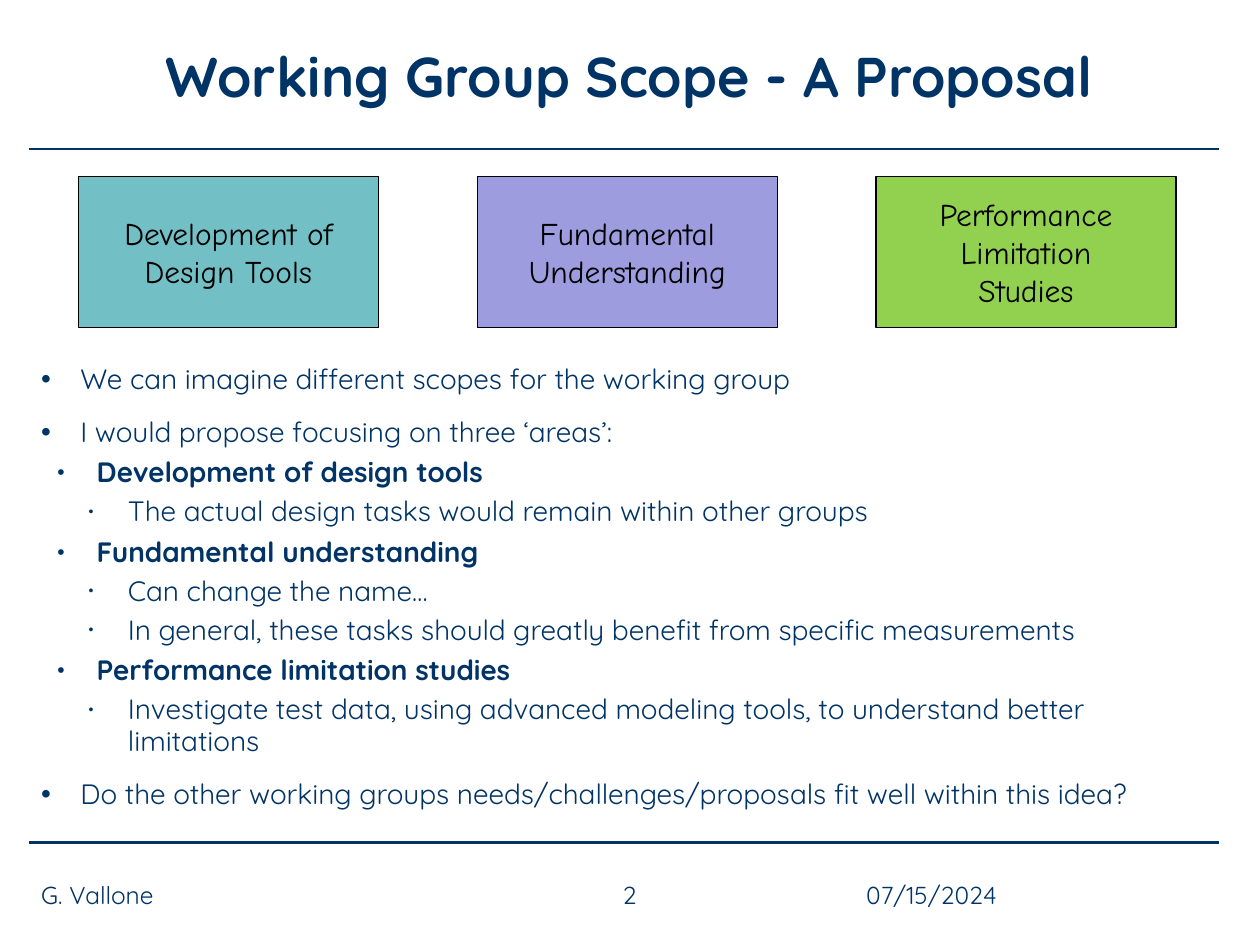
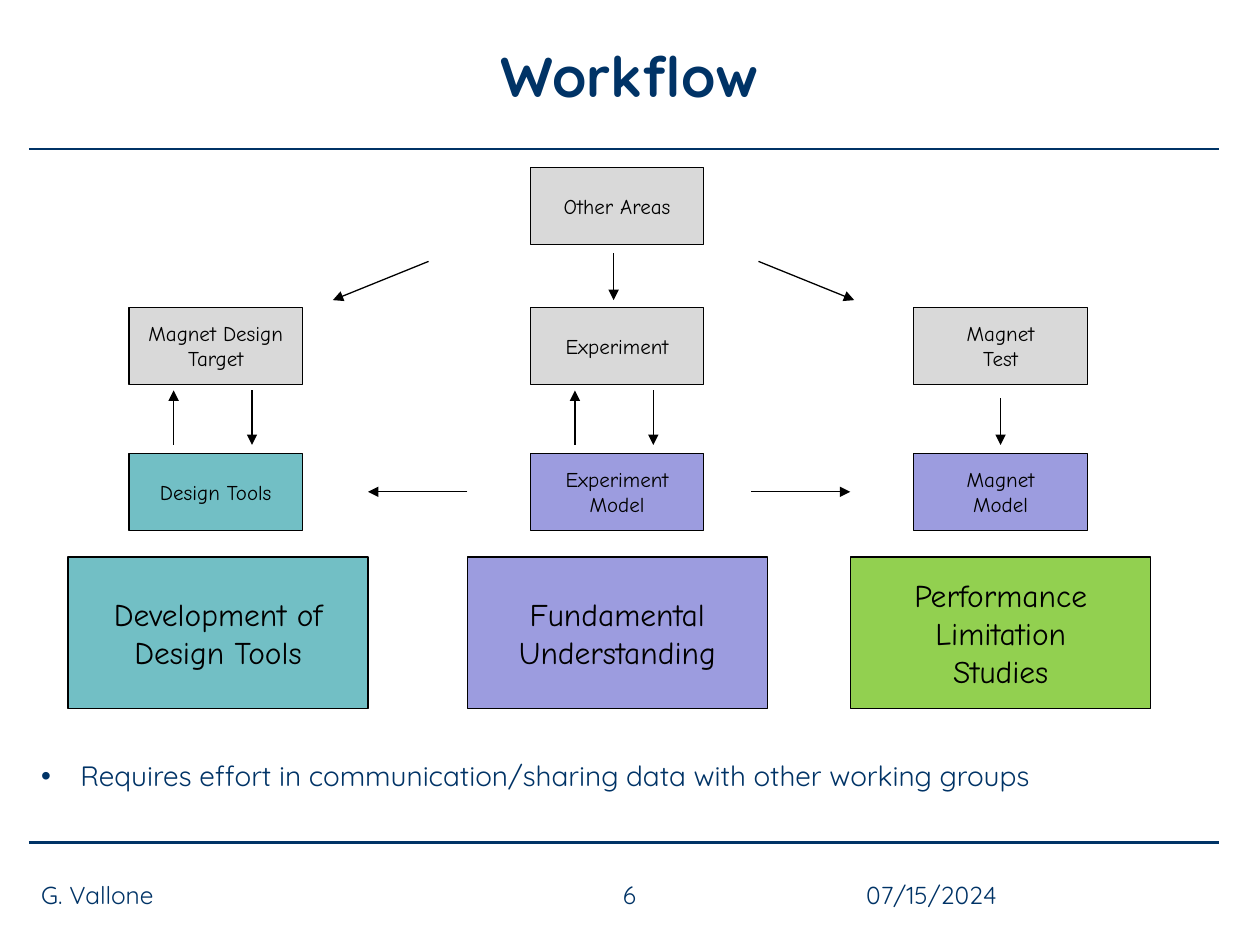
from dataclasses import dataclass

from lxml import etree
from pptx import Presentation
from pptx.dml.color import RGBColor
from pptx.enum import shapes, text
from pptx.oxml import ns
from pptx.util import Cm, Pt


@dataclass(frozen=True)
class Theme:
    navy: str = "003366"
    black: str = "000000"
    grey: str = "D9D9D9"
    teal: str = "72BFC5"
    violet: str = "9C9CDF"
    green: str = "92D050"
    body_font: str = "Quicksand"
    box_font: str = "Comic Neue"
    title_size: int = 32
    area_size: int = 18
    body_size: int = 16
    footer_size: int = 14
    node_size: int = 12
    rule_width: float = 1.5
    thin_width: float = 0.75
    line_spacing: float = 0.95


@dataclass(frozen=True)
class Box:
    """A region in centimetres."""
    left: float
    top: float
    width: float
    height: float

    def lengths(self):
        return [Cm(n) for n in (self.left, self.top, self.width, self.height)]

    def inner(self, left, top, width, height):
        return Box(self.left + left, self.top + top, width, height)


THEME = Theme()
TITLE_BOX = Box(1.88, 0.51, 21.62, 2.01)
FRAME_LEFT, FRAME_WIDTH = 0.58, 24.0
RULE_TOPS = (3.0, 16.99)
FOOTER_BOX = Box(FRAME_LEFT, 17.53, FRAME_WIDTH, 1.02)
AREA_WIDTH, AREA_HEIGHT = 6.05, 3.05
NODE_WIDTH, NODE_HEIGHT = 3.5, 1.55

AREAS = [
    (["Development of Design Tools"], THEME.teal),
    (["Fundamental Understanding"], THEME.violet),
    (["Performance", "Limitation", "Studies"], THEME.green),
]

# Per bullet level: indent (cm), space before (pt), bullet size (%)
LEVELS = {1: (0.79, 12, 100), 2: (1.12, 5, 75), 3: (1.75, 4, 50)}
HANGING = 0.79

SCOPE_BULLETS = [
    (1, "We can imagine different scopes for the working group"),
    (1, "I would propose focusing on three ‘areas’:"),
    (2, "Development of design tools"),
    (3, "The actual design tasks would remain within other groups"),
    (2, "Fundamental understanding"),
    (3, "Can change the name…"),
    (3, "In general, these tasks should greatly benefit from specific measurements"),
    (2, "Performance limitation studies"),
    (3, "Investigate test data, using advanced modeling tools, "
        "to understand better limitations"),
    (1, "Do the other working groups needs/challenges/proposals "
        "fit well within this idea?"),
]
WORKFLOW_BULLETS = [
    (1, "Requires effort in communication/sharing data with other working groups"),
]


# Basic parts
def write(para, words, *, size, font=THEME.body_font, color=THEME.navy,
          bold=False, align=text.PP_ALIGN.LEFT):
    para.alignment = align
    span = para.add_run()
    span.text = words
    span.font.name = font
    span.font.size = Pt(size)
    span.font.bold = bold
    span.font.color.rgb = RGBColor.from_string(color)


def paragraphs(frame, count):
    return [frame.paragraphs[0]] + [frame.add_paragraph() for _ in range(count - 1)]


def add_text_box(page, box, anchor):
    frame = page.shapes.add_textbox(*box.lengths()).text_frame
    frame.word_wrap = True
    frame.vertical_anchor = anchor
    return frame


def add_block(page, box, lines, fill, size):
    block = page.shapes.add_shape(shapes.MSO_SHAPE.RECTANGLE, *box.lengths())
    block.shadow.inherit = False
    block.fill.solid()
    block.fill.fore_color.rgb = RGBColor.from_string(fill)
    block.line.color.rgb = RGBColor.from_string(THEME.black)
    block.line.width = Pt(THEME.thin_width)
    frame = block.text_frame
    frame.word_wrap = True
    frame.vertical_anchor = text.MSO_ANCHOR.MIDDLE
    for para, line in zip(paragraphs(frame, len(lines)), lines):
        write(para, line, size=size, font=THEME.box_font, color=THEME.black,
              align=text.PP_ALIGN.CENTER)


def add_line(page, start, end, color=THEME.black, width=THEME.thin_width, arrow=True):
    line = page.shapes.add_connector(
        shapes.MSO_CONNECTOR.STRAIGHT, *[Cm(n) for n in (*start, *end)])
    line.line.color.rgb = RGBColor.from_string(color)
    line.line.width = Pt(width)
    if arrow:
        etree.SubElement(line.line._get_or_add_ln(), ns.qn("a:tailEnd"), type="triangle")
    etree.SubElement(line._element.spPr, ns.qn("a:effectLst"))


# Title, rules and footer shared by the slides
def add_page(deck, title, number):
    page = deck.slides.add_slide(deck.slide_layouts[5])
    heading = page.shapes.title
    heading.left, heading.top, heading.width, heading.height = TITLE_BOX.lengths()
    heading.text_frame.vertical_anchor = text.MSO_ANCHOR.MIDDLE
    write(heading.text_frame.paragraphs[0], title, size=THEME.title_size,
          bold=True, align=text.PP_ALIGN.CENTER)
    for top in RULE_TOPS:
        add_line(page, (FRAME_LEFT, top), (FRAME_LEFT + FRAME_WIDTH, top),
                 color=THEME.navy, width=THEME.rule_width, arrow=False)
    add_footer(page, FOOTER_BOX, number)
    return page


def add_footer(page, box, number):
    center = text.PP_ALIGN.CENTER
    for words, left, width, align in [
        ("G. Vallone", 0, 8.05, text.PP_ALIGN.LEFT),
        (str(number), 9.15, 5.92, center),
        ("07/15/2024", 15.24, 5.92, center),
    ]:
        frame = add_text_box(page, box.inner(left, 0, width, box.height),
                             text.MSO_ANCHOR.MIDDLE)
        write(frame.paragraphs[0], words, size=THEME.footer_size, align=align)


# Bulleted body text
def add_bullets(page, box, items):
    frame = add_text_box(page, box, text.MSO_ANCHOR.TOP)
    for index, (para, (level, words)) in enumerate(
            zip(paragraphs(frame, len(items)), items)):
        indent, before, bullet_size = LEVELS[level]
        para.level = level - 1
        para.line_spacing = THEME.line_spacing
        para.space_before = Pt(before if index else 0)
        props = para._p.get_or_add_pPr()
        props.set("marL", str(Cm(indent)))
        props.set("indent", str(-Cm(HANGING)))
        etree.SubElement(props, ns.qn("a:buSzPct"), val=str(bullet_size * 1000))
        etree.SubElement(props, ns.qn("a:buFont"), typeface="Arial")
        etree.SubElement(props, ns.qn("a:buChar"), char="•")
        write(para, words, size=THEME.body_size, bold=level == 2)


# Row of the three areas
def add_areas(page, box, lefts):
    for left, (lines, fill) in zip(lefts, AREAS):
        add_block(page, box.inner(left, 0, AREA_WIDTH, AREA_HEIGHT),
                  lines, fill, THEME.area_size)


# Flow of nodes and arrows
def add_flow(page, box):
    columns = (1.23, 9.32, 17.05)
    top_row, middle_row, model_row = 0, 2.82, 5.76
    nodes = [
        (1, top_row, ["Other Areas"], THEME.grey),
        (0, middle_row, ["Magnet Design", "Target"], THEME.grey),
        (1, middle_row, ["Experiment"], THEME.grey),
        (2, middle_row, ["Magnet", "Test"], THEME.grey),
        (0, model_row, ["Design Tools"], THEME.teal),
        (1, model_row, ["Experiment", "Model"], THEME.violet),
        (2, model_row, ["Magnet", "Model"], THEME.violet),
    ]
    for column, top, lines, fill in nodes:
        add_block(page, box.inner(columns[column], top, NODE_WIDTH, NODE_HEIGHT),
                  lines, fill, THEME.node_size)

    branch_top, branch_end = 1.89, 2.67
    gap_top, gap_end = 4.49, 5.59
    model_center = model_row + NODE_HEIGHT / 2
    arrows = [
        # From the other areas down to each column
        ((7.27, branch_top), (5.34, branch_end)),
        ((11.0, 1.73), (11.0, branch_end)),
        ((13.92, branch_top), (15.85, branch_end)),
        # From the magnet test to its model
        ((columns[2] + NODE_WIDTH / 2, 4.65), (columns[2] + NODE_WIDTH / 2, gap_end)),
        # From the experiment model to both sides
        ((8.05, model_center), (6.05, model_center)),
        ((13.77, model_center), (15.77, model_center)),
    ]
    # Loops between the middle row and the models
    for left in columns[:2]:
        arrows.append(((left + 0.9, gap_end), (left + 0.9, gap_top)))
        arrows.append(((left + 2.48, gap_top), (left + 2.48, gap_end)))
    for start, end in arrows:
        add_line(page, *[(box.left + x, box.top + y) for x, y in (start, end)])


# Slides
def add_scope_slide(deck):
    page = add_page(deck, "Working Group Scope - A Proposal", 2)
    add_bullets(page, Box(FRAME_LEFT, 7.21, FRAME_WIDTH, 9.6), SCOPE_BULLETS)
    add_areas(page, Box(1.58, 3.56, 22.13, AREA_HEIGHT),
              [column * 8.04 for column in range(3)])


def add_workflow_slide(deck):
    page = add_page(deck, "Workflow", 6)
    add_bullets(page, Box(FRAME_LEFT, 15.21, FRAME_WIDTH, 1.6), WORKFLOW_BULLETS)
    add_areas(page, Box(1.37, 11.23, 21.83, AREA_HEIGHT), (0, 8.05, 15.78))
    add_flow(page, Box(1.37, 3.38, 21.83, 7.31))


def main():
    deck = Presentation()
    deck.slide_width, deck.slide_height = Cm(25.4), Cm(19.05)
    add_scope_slide(deck)
    add_workflow_slide(deck)
    deck.save("out.pptx")


if __name__ == "__main__":
    main()
